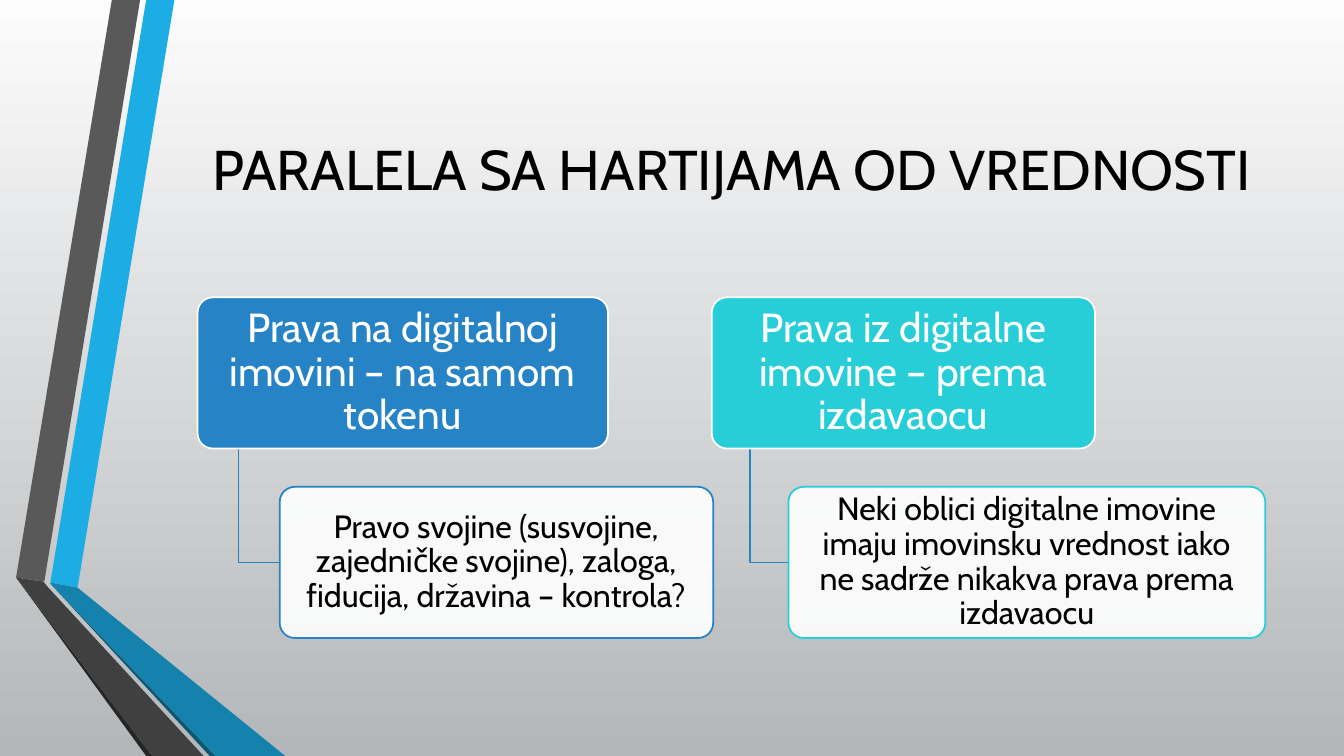
from lxml import etree
from pptx import Presentation
from pptx.dml.color import RGBColor
from pptx.enum.shapes import MSO_SHAPE
from pptx.enum.text import MSO_ANCHOR, PP_ALIGN
from pptx.oxml.ns import qn
from pptx.util import Inches, Pt

ROUNDED = MSO_SHAPE.ROUNDED_RECTANGLE
MIDDLE = MSO_ANCHOR.MIDDLE
CENTER = PP_ALIGN.CENTER
FONT = "Cabin"
COLORS = {
    "background top": "FCFCFC", "background bottom": "B4B7B9",
    "black": "000000", "white": "FFFFFF",
    "sky": "1CADE4", "sky shade": "1482AC", "sky edge": "0E5772",
    "gray": "595959", "gray shade": "404040", "gray edge": "262626",
    "blue": "2683C6", "turquoise": "27CED7",
}
COLORS = {name: RGBColor.from_string(value) for name, value in COLORS.items()}


def add_outline(points, closed):
    """Draw a freeform through points given in inches."""
    corners = [(Inches(x), Inches(y)) for x, y in points]
    builder = slide.shapes.build_freeform(*corners[0])
    builder.add_line_segments(corners[1:], close=closed)
    shape = builder.convert_to_shape()
    shape.shadow.inherit = False
    return shape


def write_text(shape, text, size, color, margin_x, margin_y):
    frame = shape.text_frame
    frame.word_wrap = True
    frame.vertical_anchor = MIDDLE
    frame.margin_left = frame.margin_right = Inches(margin_x)
    frame.margin_top = frame.margin_bottom = Inches(margin_y)
    paragraph = frame.paragraphs[0]
    paragraph.alignment = CENTER
    paragraph.line_spacing = 0.9
    run = paragraph.add_run()
    run.text = text
    run.font.name = FONT
    run.font.size = Pt(size)
    run.font.color.rgb = COLORS[color]


presentation = Presentation()
presentation.slide_width = Inches(13.33)
presentation.slide_height = Inches(7.5)
slide = presentation.slides.add_slide(presentation.slide_layouts[6])

background = slide.background.fill
background.gradient()
background.gradient_angle = 270
for stop, name in zip(background.gradient_stops, ("background top", "background bottom")):
    stop.color.rgb = COLORS[name]

# Folded ribbons on the left
ribbons = [
    ("sky", [(0.5, 5.78), (0.77, 5.83), (1.73, 0), (1.45, 0)]),
    ("gray", [(1.39, 0), (1.11, 0), (0.16, 5.73), (0.44, 5.77)]),
    ("gray edge", [(0.16, 5.73), (1.45, 7.5), (1.51, 7.5)]),
    ("sky edge", [(0.5, 5.79), (2.08, 7.5), (2.14, 7.5)]),
    ("sky shade", [(0.5, 5.79), (2.14, 7.5), (2.83, 7.5), (0.77, 5.83), (0.5, 5.78)]),
    ("gray shade", [(2.02, 7.5), (0.48, 5.83), (0.43, 5.77), (0.16, 5.73), (1.51, 7.5)]),
]
for color, points in ribbons:
    ribbon = add_outline(points, closed=True)
    ribbon.fill.solid()
    ribbon.fill.fore_color.rgb = COLORS[color]
    ribbon.line.fill.background()

title = slide.shapes.add_textbox(Inches(1.93), Inches(0.75), Inches(10.65), Inches(1.92))
write_text(title, "PARALELA SA HARTIJAMA OD VREDNOSTI", 40, "black", 0.1, 0.05)

# Two branches: a heading box, an elbow line and a detail box
HEADING_TOP, DETAIL_TOP, BOX_HEIGHT = 2.95, 4.83, 1.5
branches = [
    ("blue", 1.96, 4.07, "Prava na digitalnoj imovini – na samom tokenu",
     4.3, "Pravo svojine (susvojine, zajedničke svojine), zaloga, fiducija, državina – kontrola?"),
    ("turquoise", 7.06, 3.8, "Prava iz digitalne imovine – prema izdavaocu",
     4.73, "Neki oblici digitalne imovine imaju imovinsku vrednost iako ne sadrže "
           "nikakva prava prema izdavaocu"),
]
for color, left, heading_width, heading, detail_width, detail in branches:
    elbow_x = left + heading_width * 0.1
    detail_left = left + heading_width * 0.2
    detail_middle = DETAIL_TOP + BOX_HEIGHT / 2
    elbow = add_outline([(elbow_x, HEADING_TOP + BOX_HEIGHT), (elbow_x, detail_middle),
                         (detail_left, detail_middle)], closed=False)
    elbow.fill.background()
    elbow.line.color.rgb = COLORS["blue"]
    elbow.line.width = Pt(1.25)

    boxes = [
        (left, HEADING_TOP, heading_width, color, "white", heading, 29, "white", 0.1, 0.08),
        (detail_left, DETAIL_TOP, detail_width, "white", color, detail, 23, "black", 0.09, 0.07),
    ]
    for x, y, width, fill, line, text, size, text_color, margin_x, margin_y in boxes:
        box = slide.shapes.add_shape(ROUNDED, Inches(x), Inches(y), Inches(width), Inches(BOX_HEIGHT))
        box.adjustments[0] = 0.1
        box.shadow.inherit = False
        box.fill.solid()
        box.fill.fore_color.rgb = COLORS[fill]
        box.line.color.rgb = COLORS[line]
        box.line.width = Pt(1.25)
        write_text(box, text, size, text_color, margin_x, margin_y)
        if fill == "white":
            fill_color = box.fill._xPr.find(qn("a:solidFill")).find(qn("a:srgbClr"))
            etree.SubElement(fill_color, qn("a:alpha"), val="90000")

presentation.save("out.pptx")
